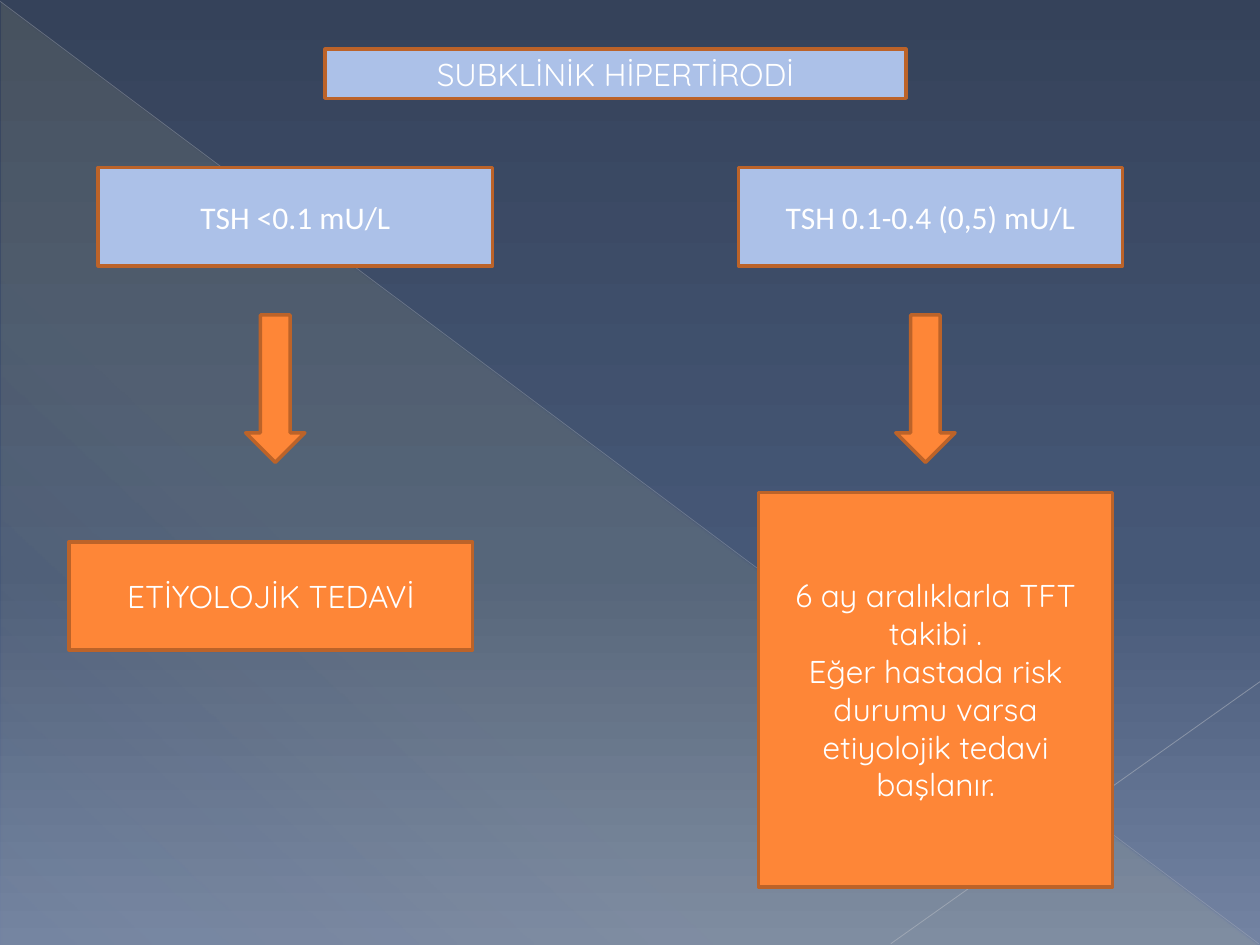
from lxml import etree
from pptx import Presentation
from pptx.dml.color import RGBColor
from pptx.enum.shapes import MSO_CONNECTOR, MSO_SHAPE
from pptx.enum.text import MSO_ANCHOR, PP_ALIGN
from pptx.oxml.ns import qn
from pptx.util import Inches, Pt

RECT = MSO_SHAPE.RECTANGLE
WEDGE = MSO_SHAPE.RIGHT_TRIANGLE
ARROW = MSO_SHAPE.DOWN_ARROW
STRAIGHT = MSO_CONNECTOR.STRAIGHT
MIDDLE = MSO_ANCHOR.MIDDLE
CENTER = PP_ALIGN.CENTER

COLS, ROWS = 100, 75
BLUE, ORANGE, RUST, WHITE = "ACC1E8", "FE8637", "BC6329", "FFFFFF"
CREAM = "FFF39D"


def tint(code):
    return RGBColor.from_string(code)


def fade(color, share):
    """Give a colour element an opacity in percent."""
    etree.SubElement(color, qn("a:alpha"), val=str(share * 1000))


def blend(fill, root, stops, angle):
    """Fill with (place, colour, opacity) stops, the angle running clockwise."""
    fill.gradient()
    grad = next(root.iter(qn("a:gradFill")))
    grad.find(qn("a:lin")).set("ang", str(angle * 60000))
    marks = grad.find(qn("a:gsLst"))
    for old in list(marks):
        marks.remove(old)
    for place, code, share in stops:
        mark = etree.SubElement(marks, qn("a:gs"), pos=str(place * 1000))
        color = etree.SubElement(mark, qn("a:srgbClr"), val=code)
        if share < 100:
            fade(color, share)


class Board:
    """Draws on one slide, with lengths in columns and rows."""

    def __init__(self, deck, font="Quicksand", size=18, edge=2):
        self.slide = deck.slides.add_slide(deck.slide_layouts[6])
        self.col = deck.slide_width / COLS
        self.row = deck.slide_height / ROWS
        self.font, self.size, self.edge = font, size, edge

    def scale(self, x, y):
        return round(x * self.col), round(y * self.row)

    def back(self, stops, angle):
        blend(self.slide.background.fill, self.slide._element, stops, angle)

    def shape(self, kind, x, y, w, h):
        item = self.slide.shapes.add_shape(
            kind, *self.scale(x, y), *self.scale(w, h))
        item.shadow.inherit = False
        return item

    def wedge(self, x, y, w, h, stops, angle):
        item = self.shape(WEDGE, x, y, w, h)
        item.line.fill.background()
        blend(item.fill, item._element.spPr, stops, angle)

    def line(self, start, end, code, width, share):
        item = self.slide.shapes.add_connector(
            STRAIGHT, *self.scale(*start), *self.scale(*end))
        item.line.color.rgb = tint(code)
        item.line.width = Pt(width)
        props = item._element.spPr
        fade(next(props.iter(qn("a:srgbClr"))), share)
        etree.SubElement(props, qn("a:effectLst"))

    def solid(self, kind, x, y, w, h, code):
        item = self.shape(kind, x, y, w, h)
        item.fill.solid()
        item.fill.fore_color.rgb = tint(code)
        item.line.color.rgb = tint(RUST)
        item.line.width = Pt(self.edge)
        return item

    def box(self, x, y, w, h, code, text, font=None):
        frame = self.solid(RECT, x, y, w, h, code).text_frame
        frame.word_wrap = True
        frame.vertical_anchor = MIDDLE
        frame.text = text
        for para in frame.paragraphs:
            para.alignment = CENTER
            para.font.name = font or self.font
            para.font.size = Pt(self.size)
            para.font.color.rgb = tint(WHITE)

    def arrow(self, x, y, w, h):
        self.solid(ARROW, x, y, w, h, ORANGE)


def main():
    deck = Presentation()
    deck.slide_width, deck.slide_height = Inches(10), Inches(7.5)
    board = Board(deck)

    board.back([(0, "35425A", 100), (60, "465877", 100),
                (100, "7383A2", 100)], 90)
    board.wedge(0.1, 0.2, 99.8, 74.8,
                [(0, CREAM, 10), (70, CREAM, 8), (100, CREAM, 1)], 133)
    board.line((0, 0.1), (99.9, 74.9), "BABDC4", 0.39, 35)
    board.line((100, 54.1), (70.7, 74.9), "C1C4CA", 0.47, 45)

    for x, w, text in ((7.8, 31.3, "TSH <0.1 mU/L"),
                       (58.6, 30.5, "TSH 0.1-0.4 (0,5) mU/L")):
        board.box(x, 13.3, w, 7.8, BLUE, text, "Calibri")
    board.box(25.8, 3.9, 46.1, 3.9, BLUE, "SUBKLİNİK HİPERTİRODİ")
    board.box(5.5, 43, 32, 8.6, ORANGE, "ETİYOLOJİK TEDAVİ")
    board.box(60.2, 39.1, 28.1, 31.3, ORANGE,
              "6 ay aralıklarla TFT takibi .\n"
              "Eğer hastada risk durumu varsa etiyolojik tedavi başlanır.")
    for x in (19.5, 71.1):
        board.arrow(x, 25, 4.7, 11.7)

    deck.save("out.pptx")


if __name__ == "__main__":
    main()
